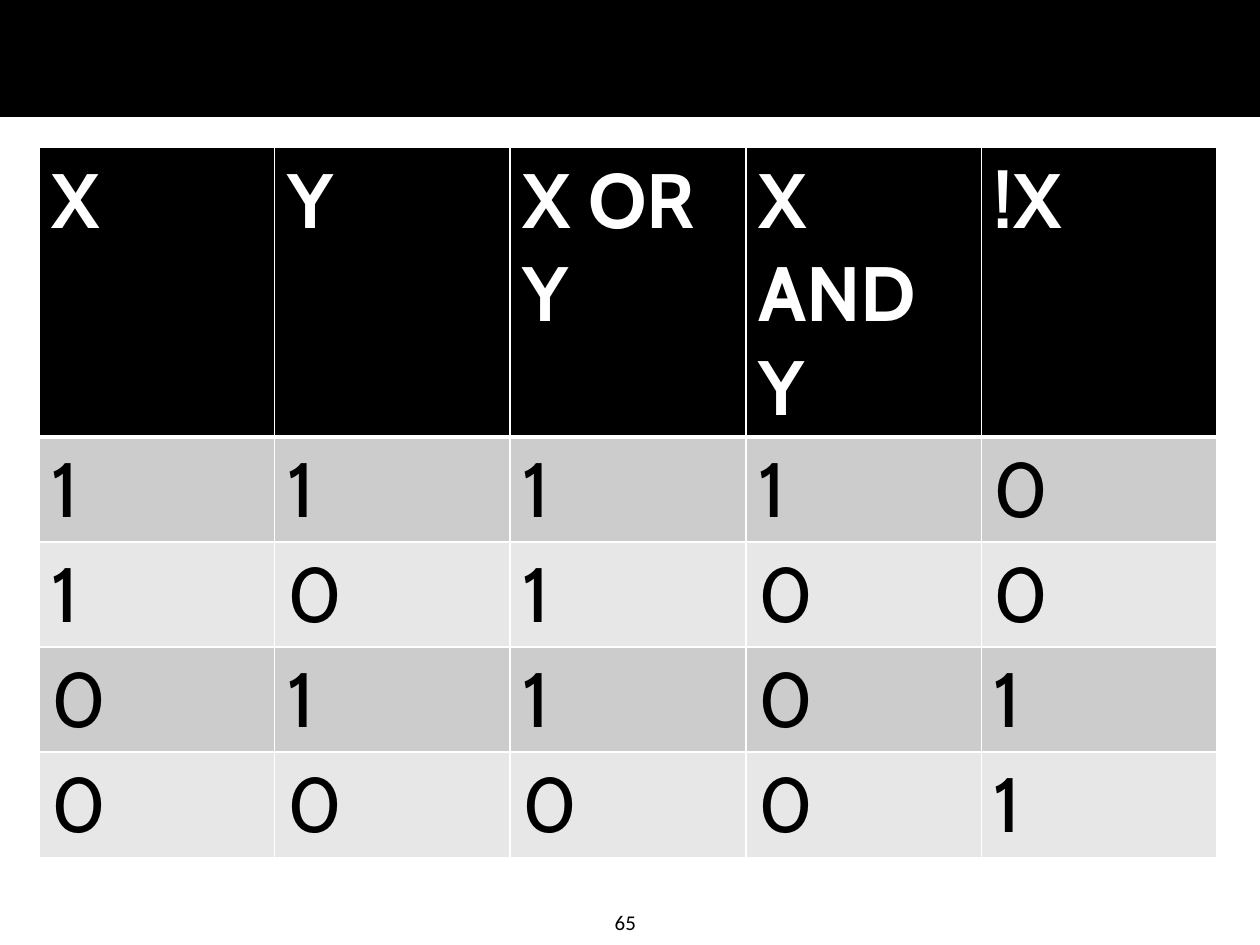
from dataclasses import dataclass

from lxml.etree import SubElement
from pptx import Presentation
from pptx.dml.color import RGBColor as RGB
from pptx.enum.shapes import MSO_SHAPE as Shape
from pptx.enum.text import MSO_AUTO_SIZE as AutoSize
from pptx.oxml.ns import qn
from pptx.util import Inches, Pt


@dataclass(frozen=True)
class Theme:
    black: RGB = RGB(0, 0, 0)
    white: RGB = RGB(255, 255, 255)
    bands: tuple = (RGB(0xCC, 0xCC, 0xCC), RGB(0xE7, 0xE7, 0xE7))
    table_font: str = "Cabin"
    table_size: Pt = Pt(44)
    number_font: str = "Calibri"
    number_size: Pt = Pt(12)
    rule: Pt = Pt(1)
    header_rule: Pt = Pt(3)


THEME = Theme()
HEADINGS = ("X", "Y", "X OR Y", "X AND Y", "!X")
INPUTS = ((1, 1), (1, 0), (0, 1), (0, 0))


def style_font(paragraph, name, size, color, bold=False):
    font = paragraph.font
    font.name, font.size, font.bold = name, size, bold
    font.color.rgb = color


def add_header_band(slide, left, top, width, height):
    band = slide.shapes.add_shape(Shape.RECTANGLE, left, top, width, height)
    band.shadow.inherit = False
    band.fill.solid()
    band.fill.fore_color.rgb = THEME.black
    band.line.color.rgb = THEME.black
    band.line.width = THEME.rule


def add_page_number(slide, left, top, width, height, number):
    page_number = slide.shapes.add_textbox(left, top, width, height)
    frame = page_number.text_frame
    frame.word_wrap = False
    frame.auto_size = AutoSize.SHAPE_TO_FIT_TEXT
    frame.text = str(number)
    style_font(frame.paragraphs[0], THEME.number_font, THEME.number_size, THEME.black)


def set_borders(cell, top, bottom):
    properties = cell._tc.get_or_add_tcPr()
    widths = {"a:lnL": THEME.rule, "a:lnR": THEME.rule, "a:lnT": top, "a:lnB": bottom}
    for side, width in widths.items():
        line = SubElement(properties, qn(side), w=str(int(width)))
        fill = SubElement(line, qn("a:solidFill"))
        SubElement(fill, qn("a:srgbClr"), val=str(THEME.white))


def add_truth_table(slide, left, top, width, height):
    results = [(x, y, x | y, x & y, 1 - x) for x, y in INPUTS]
    rows = [HEADINGS, *results]
    table = slide.shapes.add_table(
        len(rows), len(HEADINGS), left, top, width, height
    ).table

    for row_index, values in enumerate(rows):
        is_header = row_index == 0
        background = THEME.black if is_header else THEME.bands[(row_index - 1) % 2]
        ink = THEME.white if is_header else THEME.black
        top_rule = THEME.header_rule if row_index == 1 else THEME.rule
        bottom_rule = THEME.header_rule if is_header else THEME.rule
        for column_index, value in enumerate(values):
            cell = table.cell(row_index, column_index)
            set_borders(cell, top_rule, bottom_rule)
            cell.fill.solid()
            cell.fill.fore_color.rgb = background
            cell.text = str(value)
            style_font(cell.text_frame.paragraphs[0], THEME.table_font,
                       THEME.table_size, ink, is_header)


def main():
    deck = Presentation()
    deck.slide_width, deck.slide_height = Inches(10), Inches(7.5)
    slide = deck.slides.add_slide(deck.slide_layouts[6])

    # Band across the top
    add_header_band(slide, 0, 0, deck.slide_width, Inches(0.92))
    # Page number in the footer
    add_page_number(slide, Inches(4.78), Inches(7.17), Inches(0.41), Inches(0.3), 65)
    # Truth table, whose rows grow to fit their text
    add_truth_table(slide, Inches(0.31), Inches(1.17), Inches(9.35), Inches(2.03))

    deck.save("out.pptx")


if __name__ == "__main__":
    main()
